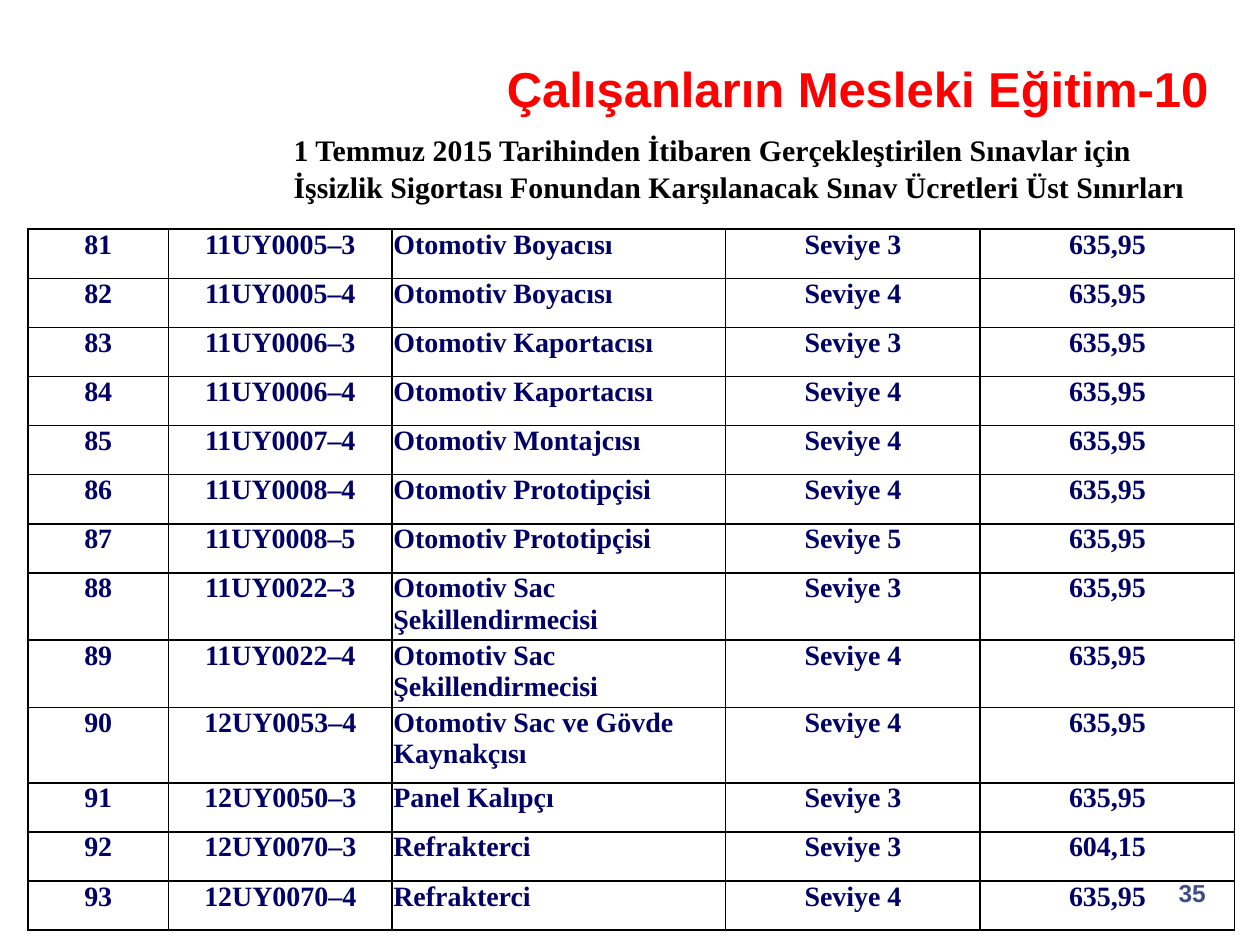
from dataclasses import dataclass

import lxml.etree
import pptx
import pptx.dml.color
import pptx.enum.text
import pptx.oxml.ns
import pptx.util
from pptx.util import Cm

ALIGN = pptx.enum.text.PP_ALIGN
ANCHOR = pptx.enum.text.MSO_ANCHOR
SERIF = "Times New Roman"
FIRST_NUMBER = 81
COLUMN_WIDTHS = (2.84, 4.5, 6.73, 5.13, 5.13)
OCCUPATION_COLUMN = 2


@dataclass(frozen=True)
class TextStyle:
    size: float
    color: str
    font: str
    align: ALIGN = ALIGN.LEFT
    line_spacing: float = 1.0


@dataclass(frozen=True)
class Exam:
    code: str
    occupation: str
    fee: str = "635,95"
    height: float = 0.99

    def values(self, number: int) -> tuple:
        return (str(number), self.code, self.occupation, f"Seviye {self.code[-1]}", self.fee)


TITLE = TextStyle(28, "FF0000", "Arial", ALIGN.RIGHT)
SUBTITLE = TextStyle(17, "000000", SERIF, line_spacing=1.05)
PAGE_NUMBER = TextStyle(14, "3D4E84", "Arial", ALIGN.RIGHT)
CENTERED_CELL = TextStyle(16, "000066", SERIF, ALIGN.CENTER)
OCCUPATION_CELL = TextStyle(16, "000066", SERIF)

EXAMS = (
    Exam("11UY0005–3", "Otomotiv Boyacısı"),
    Exam("11UY0005–4", "Otomotiv Boyacısı"),
    Exam("11UY0006–3", "Otomotiv Kaportacısı"),
    Exam("11UY0006–4", "Otomotiv Kaportacısı"),
    Exam("11UY0007–4", "Otomotiv Montajcısı"),
    Exam("11UY0008–4", "Otomotiv Prototipçisi"),
    Exam("11UY0008–5", "Otomotiv Prototipçisi"),
    Exam("11UY0022–3", "Otomotiv Sac Şekillendirmecisi", height=1.35),
    Exam("11UY0022–4", "Otomotiv Sac Şekillendirmecisi", height=1.35),
    Exam("12UY0053–4", "Otomotiv Sac ve Gövde Kaynakçısı", height=1.52),
    Exam("12UY0050–3", "Panel Kalıpçı"),
    Exam("12UY0070–3", "Refrakterci", fee="604,15"),
    Exam("12UY0070–4", "Refrakterci"),
)


def rgb(color: str) -> pptx.dml.color.RGBColor:
    return pptx.dml.color.RGBColor.from_string(color)


def assign(target, values: dict) -> None:
    for name, value in values.items():
        setattr(target, name, value)


def write(frame, text: str, style: TextStyle) -> None:
    para = frame.paragraphs[0]
    assign(para, {"alignment": style.align, "line_spacing": style.line_spacing})
    span = para.add_run()
    span.text = text
    assign(span.font, {"size": pptx.util.Pt(style.size), "name": style.font, "bold": True})
    span.font.color.rgb = rgb(style.color)


def add_text(slide, text: str, style: TextStyle, bounds: tuple, left_inset: float = 0.25) -> None:
    box = slide.shapes.add_textbox(*map(Cm, bounds))
    assign(box.text_frame, {"word_wrap": True, "margin_left": Cm(left_inset)})
    write(box.text_frame, text, style)


def add_borders(cell, color: str, points: float) -> None:
    properties = cell._tc.get_or_add_tcPr()
    tag = pptx.oxml.ns.qn
    for side in ("L", "R", "T", "B"):
        line = lxml.etree.SubElement(properties, tag(f"a:ln{side}"), w=str(pptx.util.Pt(points)))
        fill = lxml.etree.SubElement(line, tag("a:solidFill"))
        lxml.etree.SubElement(fill, tag("a:srgbClr"), val=color)


def fill_cell(cell, text: str, column: int) -> None:
    is_occupation = column == OCCUPATION_COLUMN
    assign(cell, {
        "margin_left": Cm(0.03 if is_occupation else 0),
        "margin_right": 0,
        "margin_top": 0,
        "margin_bottom": 0,
        "vertical_anchor": ANCHOR.TOP,
    })
    write(cell.text_frame, text, OCCUPATION_CELL if is_occupation else CENTERED_CELL)
    add_borders(cell, "000000", 1)
    cell.fill.background()


def add_exam_table(slide) -> None:
    total_height = sum(exam.height for exam in EXAMS)
    bounds = (0.56, 4.62, sum(COLUMN_WIDTHS), total_height)
    table = slide.shapes.add_table(len(EXAMS), len(COLUMN_WIDTHS), *map(Cm, bounds)).table
    assign(table, {"first_row": False, "horz_banding": False})
    for column, width in zip(table.columns, COLUMN_WIDTHS):
        column.width = Cm(width)
    for index, exam in enumerate(EXAMS):
        table.rows[index].height = Cm(exam.height)
        for column, text in enumerate(exam.values(FIRST_NUMBER + index)):
            fill_cell(table.cell(index, column), text, column)


def main() -> None:
    deck = pptx.Presentation()
    assign(deck, {"slide_width": Cm(25.4), "slide_height": Cm(19.05)})
    slide = deck.slides.add_slide(deck.slide_layouts[5])

    title = slide.shapes.title
    assign(title, {"left": Cm(8.61), "top": Cm(1.07), "width": Cm(16.28), "height": Cm(1.42)})
    assign(title.text_frame, {"margin_right": Cm(0.53), "vertical_anchor": ANCHOR.MIDDLE})
    write(title.text_frame, "Çalışanların Mesleki Eğitim-10", TITLE)

    add_text(slide, "35", PAGE_NUMBER, (23.11, 17.58, 1.45, 1.27))
    add_text(
        slide,
        "1 Temmuz 2015 Tarihinden İtibaren Gerçekleştirilen Sınavlar için "
        "İşsizlik Sigortası Fonundan Karşılanacak Sınav Ücretleri Üst Sınırları",
        SUBTITLE,
        (3.3, 2.49, 21.59, 1.7),
        left_inset=2.62,
    )
    add_exam_table(slide)
    deck.save("out.pptx")


if __name__ == "__main__":
    main()
